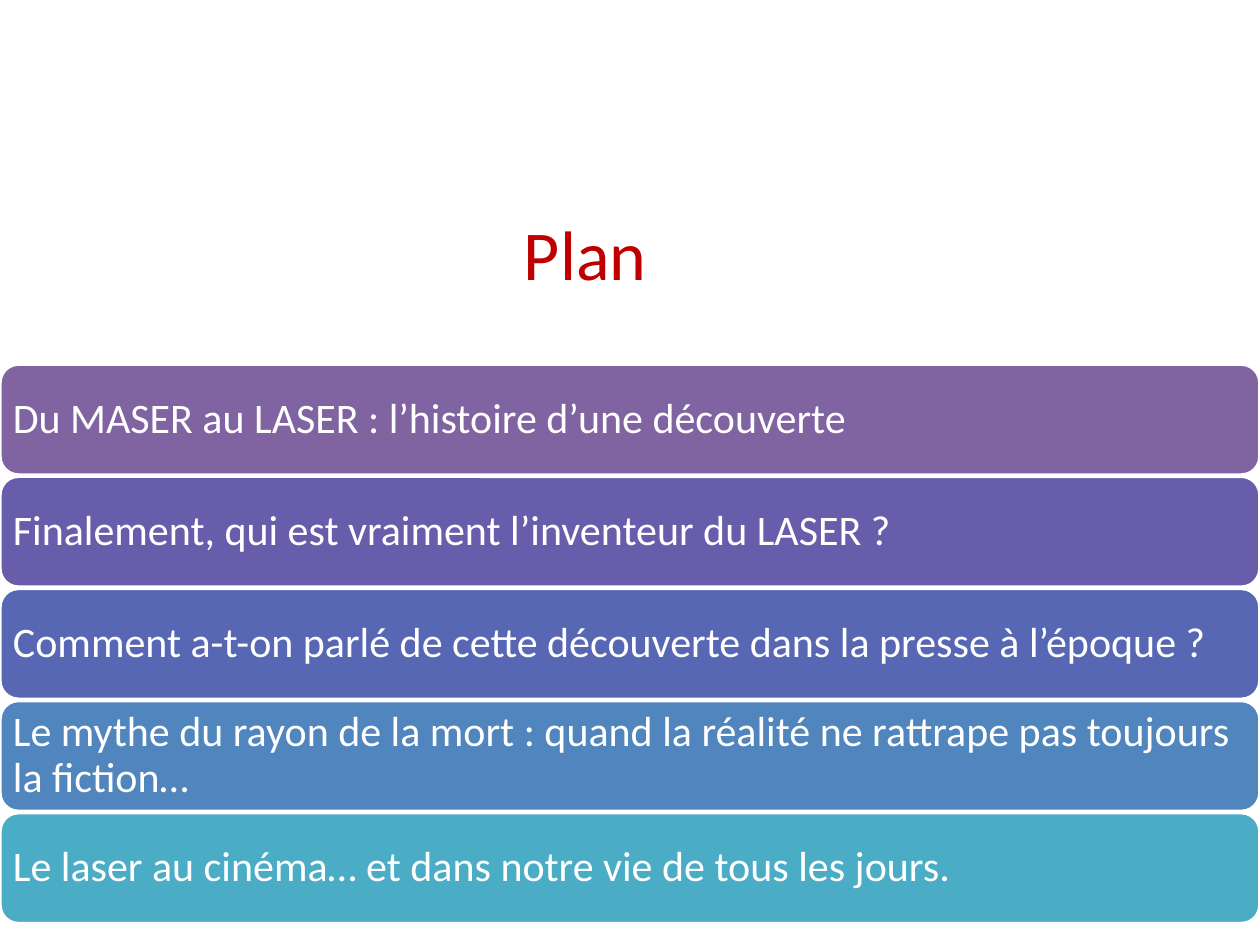
from dataclasses import dataclass

from pptx import Presentation
from pptx.dml.color import RGBColor
from pptx.enum.shapes import MSO_SHAPE
from pptx.enum.text import MSO_ANCHOR, MSO_AUTO_SIZE, PP_ALIGN
from pptx.util import Inches, Pt


@dataclass(frozen=True)
class Theme:
    """Colours, font and type sizes of the slide."""

    font: str = "Calibri"
    title_size: int = 40
    topic_size: int = 24
    title_color: str = "C00000"
    light: str = "FFFFFF"


THEME = Theme()
SLIDE_WIDTH, SLIDE_HEIGHT = 10, 7.5
BAR_TOP, BAR_HEIGHT, BAR_PITCH = 2.89, 0.88, 0.89
TOPICS = [
    ("Du MASER au LASER : l’histoire d’une découverte", "8064A2"),
    ("Finalement, qui est vraiment l’inventeur du LASER ?", "685DAB"),
    ("Comment a-t-on parlé de cette découverte dans la presse à l’époque ?", "5767B4"),
    ("Le mythe du rayon de la mort : quand la réalité ne rattrape pas toujours la fiction…", "5185BD"),
    ("Le laser au cinéma… et dans notre vie de tous les jours.", "4BACC6"),
]


def add_span(para, text, size, color):
    """Add one styled run to a paragraph."""
    span = para.add_run()
    span.text = text
    span.font.name = THEME.font
    span.font.size = Pt(size)
    span.font.color.rgb = RGBColor.from_string(color)


def add_title(page, text):
    """Add the title above the list of topics."""
    box = page.shapes.add_textbox(Inches(4.06), Inches(1.62), Inches(1.72), Inches(0.77))
    box.text_frame.word_wrap = True
    box.text_frame.auto_size = MSO_AUTO_SIZE.SHAPE_TO_FIT_TEXT
    add_span(box.text_frame.paragraphs[0], text, THEME.title_size, THEME.title_color)


def add_topic(page, top, text, color):
    """Add a full-width rounded bar holding one topic."""
    bar = page.shapes.add_shape(
        MSO_SHAPE.ROUNDED_RECTANGLE, 0, Inches(top), Inches(SLIDE_WIDTH), Inches(BAR_HEIGHT)
    )
    bar.shadow.inherit = False
    bar.fill.solid()
    bar.fill.fore_color.rgb = RGBColor.from_string(color)
    bar.line.color.rgb = RGBColor.from_string(THEME.light)
    bar.line.width = Pt(2)
    frame = bar.text_frame
    frame.word_wrap = True
    frame.vertical_anchor = MSO_ANCHOR.MIDDLE
    frame.margin_left = frame.margin_right = Inches(0.06)
    frame.margin_top = frame.margin_bottom = Inches(0.03)
    para = frame.paragraphs[0]
    para.alignment = PP_ALIGN.LEFT
    para.line_spacing = 0.9
    add_span(para, text, THEME.topic_size, THEME.light)


def main():
    """Build the outline slide and save the deck."""
    deck = Presentation()
    deck.slide_width, deck.slide_height = Inches(SLIDE_WIDTH), Inches(SLIDE_HEIGHT)
    page = deck.slides.add_slide(deck.slide_layouts[6])
    for index, (text, color) in enumerate(TOPICS):
        add_topic(page, BAR_TOP + index * BAR_PITCH, text, color)
    add_title(page, "Plan")
    deck.save("out.pptx")


if __name__ == "__main__":
    main()
